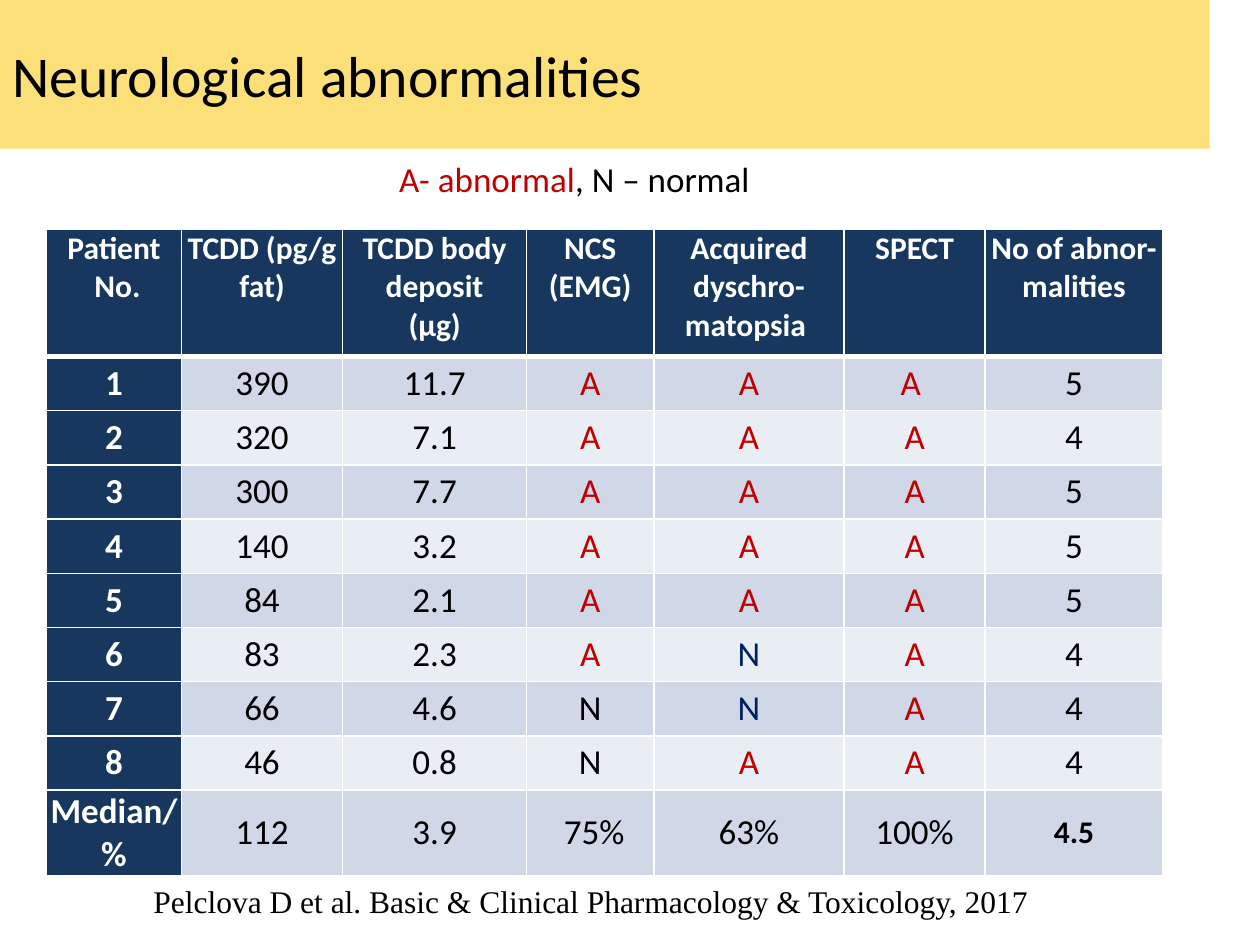
from dataclasses import dataclass

from lxml.etree import SubElement
from pptx import Presentation
from pptx.dml.color import RGBColor
from pptx.enum.shapes import MSO_SHAPE as Shape
from pptx.enum.text import MSO_ANCHOR as Anchor, PP_ALIGN as Align
from pptx.oxml.ns import qn
from pptx.util import Inches, Pt

COLORS = {
    "banner": "FBD753", "navy": "17375E", "band": "D0D8E8", "light": "E9EDF4",
    "white": "FFFFFF", "black": "000000", "abnormal": "C00000", "normal": "002060",
}
HEADERS = [
    "Patient\n No.", "TCDD (pg/g\nfat)", "TCDD body deposit\n(µg)", "NCS\n(EMG)",
    "Acquired dyschro-\nmatopsia ", "SPECT", "No of abnor-malities",
]
PATIENTS = [
    ["1", "390", "11.7", "A", "A", "A ", "5"],
    ["2", "320", "7.1", "A", "A", "A", "4"],
    ["3", "300", "7.7", "A", "A", "A", "5"],
    ["4", "140", "3.2", "A", "A", "A", "5"],
    ["5", "84", "2.1", "A", "A", "A", "5"],
    ["6", "83", "2.3", "A", "N", "A", "4"],
    ["7", "66", "4.6", "N", "N", "A", "4"],
    ["8", "46", "0.8", "N", "A", "A", "4"],
]
SUMMARY = ["Median/%", "112", "3.9", " 75%", "63%", "100%", "4.5"]
COLUMN_WIDTHS = [1.07, 1.28, 1.46, 1.01, 1.51, 1.12, 1.41]
HEADER_HEIGHT, ROW_HEIGHT = 1.01, 0.43
DYSCHROMATOPSIA = 4


@dataclass
class Style:
    size: float
    color: str = "black"
    bold: bool = False
    name: str = "Calibri"


@dataclass
class Caption:
    left: float
    top: float
    width: float
    height: float
    spans: list[tuple[str, str]]
    style: Style
    align: Align = Align.LEFT


CAPTIONS = [
    Caption(3.07, 1.2, 3.04, 0.44,
            [("A- abnormal", "abnormal"), (", N – normal", "black")], Style(20)),
    Caption(1.12, 6.95, 8.6, 0.4,
            [("Pelclova D et al. Basic & Clinical Pharmacology & Toxicology, 2017", "black")],
            Style(18, name="Times New Roman"), Align.JUSTIFY),
]


def color(key: str) -> RGBColor:
    return RGBColor.from_string(COLORS[key])


def set_font(font, style: Style) -> None:
    font.name = style.name
    font.size = Pt(style.size)
    font.bold = style.bold
    font.color.rgb = color(style.color)


def draw_banner(page, title: str) -> None:
    banner = page.shapes.add_shape(Shape.RECTANGLE, 0, 0, Inches(9.6), Inches(1.18))
    banner.shadow.inherit = False
    banner.line.fill.background()
    banner.fill.solid()
    banner.fill.fore_color.rgb = color("banner")
    tint = banner.fill._xPr.find(qn("a:solidFill"))[0]
    SubElement(tint, qn("a:alpha"), val="78000")
    banner.text_frame.vertical_anchor = Anchor.MIDDLE
    para = banner.text_frame.paragraphs[0]
    para.text = title
    para.alignment = Align.LEFT
    set_font(para.font, Style(33))


def draw_caption(page, caption: Caption) -> None:
    box = page.shapes.add_textbox(Inches(caption.left), Inches(caption.top),
                                  Inches(caption.width), Inches(caption.height))
    box.text_frame.word_wrap = True
    para = box.text_frame.paragraphs[0]
    para.alignment = caption.align
    set_font(para.font, caption.style)
    for text, key in caption.spans:
        span = para.add_run()
        span.text = text
        span.font.color.rgb = color(key)


def add_border(cell, side: str, points: float) -> None:
    line = SubElement(cell._tc.get_or_add_tcPr(), qn(f"a:ln{side}"), w=str(Pt(points)))
    fill = SubElement(line, qn("a:solidFill"))
    SubElement(fill, qn("a:srgbClr"), val=COLORS["white"])


def cell_style(row: int, column: int, text: str) -> Style:
    if row == 0:
        return Style(18, "white", True)
    if column == 0:
        return Style(20, "white", True)
    if text == SUMMARY[-1]:
        return Style(18, bold=True)
    if text.strip() == "A":
        return Style(20, "abnormal")
    if text == "N" and column == DYSCHROMATOPSIA:
        return Style(20, "normal")
    return Style(20)


def fill_cell(cell, row: int, column: int, text: str) -> None:
    cell.margin_left = cell.margin_right = cell.margin_top = cell.margin_bottom = 0
    cell.vertical_anchor = Anchor.TOP if row == 0 else Anchor.MIDDLE
    for side in "LRTB":
        heavy = (row, side) in [(0, "B"), (1, "T")]
        add_border(cell, side, 3 if heavy else 1)
    cell.fill.solid()
    shade = "navy" if row == 0 or column == 0 else "band" if row % 2 else "light"
    cell.fill.fore_color.rgb = color(shade)
    cell.text = text
    for para in cell.text_frame.paragraphs:
        para.alignment = Align.CENTER
        set_font(para.font, cell_style(row, column, text))


def draw_results(page) -> None:
    rows = [HEADERS, *PATIENTS, SUMMARY]
    height = HEADER_HEIGHT + ROW_HEIGHT * (len(rows) - 1)
    table = page.shapes.add_table(len(rows), len(HEADERS), Inches(0.37), Inches(1.82),
                                  Inches(sum(COLUMN_WIDTHS)), Inches(height)).table
    for column, width in zip(table.columns, COLUMN_WIDTHS):
        column.width = Inches(width)
    for index, values in enumerate(rows):
        table.rows[index].height = Inches(ROW_HEIGHT if index else HEADER_HEIGHT)
        for column, text in enumerate(values):
            fill_cell(table.cell(index, column), index, column, text)


def main() -> None:
    deck = Presentation()
    deck.slide_width, deck.slide_height = Inches(10), Inches(7.5)
    page = deck.slides.add_slide(deck.slide_layouts[6])
    draw_banner(page, "Neurological abnormalities")
    draw_results(page)
    for caption in CAPTIONS:
        draw_caption(page, caption)
    deck.save("out.pptx")


if __name__ == "__main__":
    main()
